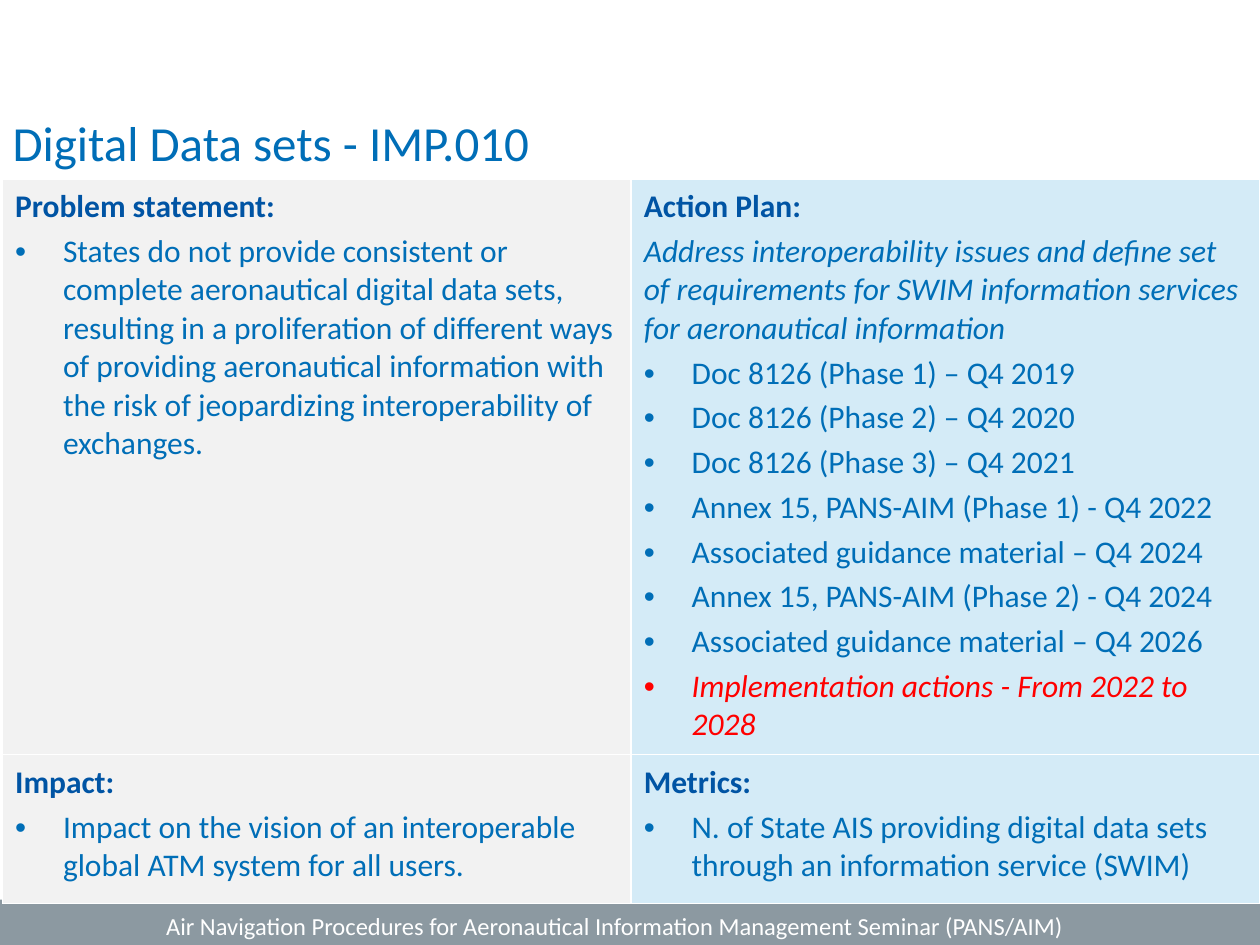
from pptx import Presentation, util as u
from pptx.dml.color import RGBColor
from pptx.enum import shapes, text
from pptx.oxml.ns import qn
from lxml import etree

BLUE = RGBColor(0x00, 0x6E, 0xB7)
NAVY = RGBColor(0x00, 0x54, 0xA4)
RED = RGBColor(0xFF, 0x00, 0x00)
WHITE = RGBColor(0xFF, 0xFF, 0xFF)
SLATE = RGBColor(0x8C, 0x99, 0xA1)
PALE = RGBColor(0xF2, 0xF2, 0xF2)
SKY = RGBColor(0xD4, 0xEB, 0xF7)


def write(para, words, size=18, color=BLUE, bold=False, italic=False, bullet=False, gap=0):
    """Fill a paragraph with formatted text."""
    props = para._p.get_or_add_pPr()
    if bullet:
        props.set("marL", str(u.Inches(0.38)))
        props.set("indent", str(-u.Inches(0.38)))
        etree.SubElement(props, qn("a:buFont"), typeface="Arial")
        etree.SubElement(props, qn("a:buChar"), char="•")
    para.alignment = text.PP_ALIGN.LEFT
    para.space_before = u.Pt(gap)
    run = para.add_run()
    run.text = words
    font = run.font
    font.name, font.size = "Calibri", u.Pt(size)
    font.bold, font.italic = bold, italic
    font.color.rgb = color


class Deck:
    """Style and current slide, with lengths as shares of the slide."""

    def __init__(self):
        """Start a deck with one titled slide."""
        self.prs = Presentation()
        self.prs.slide_width, self.prs.slide_height = u.Inches(10), u.Inches(7.5)
        self.slide = self.prs.slides.add_slide(self.prs.slide_layouts[5])

    def box(self, x, y, w, h):
        """Turn shares of the slide into lengths."""
        wide, high = self.prs.slide_width, self.prs.slide_height
        return [round(n) for n in (x * wide, y * high, w * wide, h * high)]

    def title(self, words, *area):
        """Place and format the title."""
        head = self.slide.shapes.title
        head.left, head.top, head.width, head.height = self.box(*area)
        head.text_frame.vertical_anchor = text.MSO_ANCHOR.TOP
        write(head.text_frame.paragraphs[0], words, size=28)

    def bar(self, color, *area):
        """Draw a plain filled band."""
        band = self.slide.shapes.add_shape(shapes.MSO_SHAPE.RECTANGLE, *self.box(*area))
        band.shadow.inherit = False
        band.fill.solid()
        band.fill.fore_color.rgb = color
        band.line.fill.background()

    def note(self, words, *area, **style):
        """Add a wrapped text box."""
        frame = self.slide.shapes.add_textbox(*self.box(*area)).text_frame
        frame.word_wrap = True
        write(frame.paragraphs[0], words, **style)

    def edge(self, cell):
        """Give a cell thin white borders."""
        props = cell._tc.get_or_add_tcPr()
        for spot, side in enumerate(("lnL", "lnR", "lnT", "lnB")):
            line = etree.Element(qn(f"a:{side}"), w=str(u.Pt(1)))
            fill = etree.SubElement(line, qn("a:solidFill"))
            etree.SubElement(fill, qn("a:srgbClr"), val=str(WHITE))
            props.insert(spot, line)

    def cell(self, cell, color, head, items):
        """Fill a cell with a heading and its items."""
        cell.fill.solid()
        cell.fill.fore_color.rgb = color
        cell.margin_left = cell.margin_right = u.Inches(0.1)
        cell.margin_top = cell.margin_bottom = u.Inches(0.07)
        self.edge(cell)
        frame = cell.text_frame
        write(frame.paragraphs[0], head, color=NAVY, bold=True)
        for words, style in items:
            write(frame.add_paragraph(), words, gap=3.6, **style)

    def grid(self, rows, tall, *area):
        """Add a table with equal columns and given row shares."""
        frame = self.slide.shapes.add_table(len(rows), len(rows[0]), *self.box(*area))
        table = frame.table
        table.first_row = table.horz_banding = False
        for r, row in enumerate(rows):
            table.rows[r].height = round(tall[r] * self.prs.slide_height)
            for c, (head, items) in enumerate(row):
                self.cell(table.cell(r, c), (PALE, SKY)[c], head, items)


def points(*lines, **style):
    """Pair each line with the bullet style."""
    return [(line, {"bullet": True, **style}) for line in lines]


def main():
    """Build the slide and save it."""
    deck = Deck()
    deck.bar(SLATE, 0, 7.14 / 7.5, 1, 0.36 / 7.5)
    deck.title("Digital Data sets - IMP.010", 0, 0.84 / 7.5, 0.9, 0.97 / 7.5)
    problem = points(
        "States do not provide consistent or complete aeronautical digital data sets, "
        "resulting in a proliferation of different ways of providing aeronautical "
        "information with the risk of jeopardizing interoperability of exchanges.")
    aim = ("Address interoperability issues and define set of requirements for SWIM "
           "information services for aeronautical information")
    plan = [(aim, {"italic": True})] + points(
        "Doc 8126 (Phase 1) – Q4 2019",
        "Doc 8126 (Phase 2) – Q4 2020",
        "Doc 8126 (Phase 3) – Q4 2021",
        "Annex 15, PANS-AIM (Phase 1) - Q4 2022",
        "Associated guidance material – Q4 2024",
        "Annex 15, PANS-AIM (Phase 2) - Q4 2024",
        "Associated guidance material – Q4 2026",
    ) + points("Implementation actions - From 2022 to 2028", color=RED, italic=True)
    impact = points("Impact on the vision of an interoperable global ATM system for all users.")
    metrics = points("N. of State AIS providing digital data sets through an "
                     "information service (SWIM)")
    rows = [[("Problem statement:", problem), ("Action Plan:", plan)],
            [("Impact:", impact), ("Metrics:", metrics)]]
    deck.grid(rows, (4.57 / 7.5, 1.18 / 7.5), 0.002, 1.42 / 7.5, 0.998, 5.75 / 7.5)
    deck.note("Air Navigation Procedures for Aeronautical Information Management "
              "Seminar (PANS/AIM)", 0.122, 7.18 / 7.5, 0.772, 0.57 / 7.5, size=14, color=WHITE)
    deck.prs.save("out.pptx")


if __name__ == "__main__":
    main()
